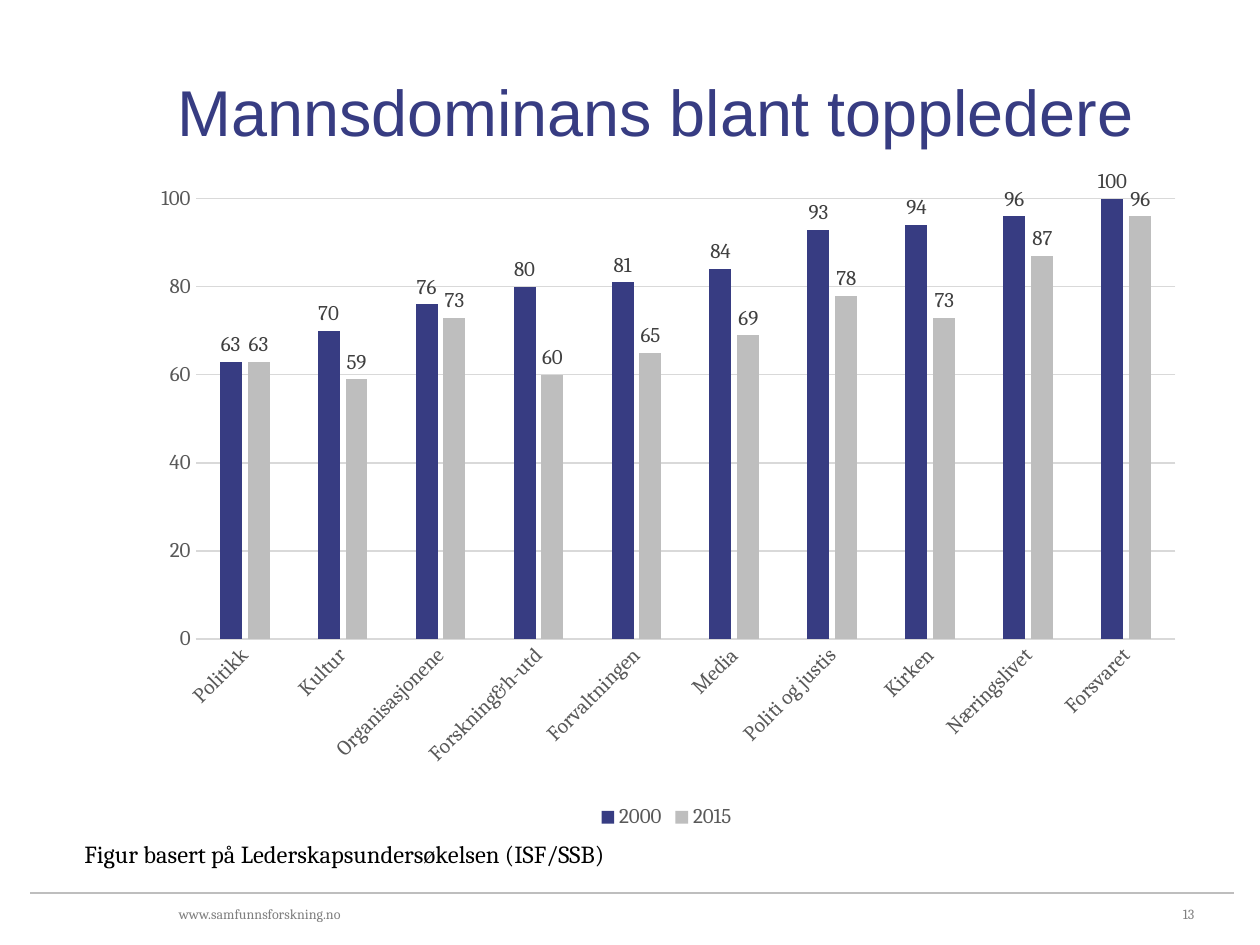
import pptx
import pptx.chart.data
import pptx.dml.color
import pptx.enum.chart
import pptx.enum.shapes
import pptx.enum.text
import pptx.oxml
import pptx.oxml.ns
import pptx.util

SCALE = 9144
NAVY = "373C82"
SILVER = "BEBEBE"
GRID = "D9D9D9"
AXIS_TEXT = "595959"
LABEL_TEXT = "404040"
FOOTER_TEXT = "7F7F7F"
BLACK = "000000"

SECTORS = ["Politikk", "Kultur", "Organisasjonene", "Forskning&h-utd", "Forvaltningen",
           "Media", "Politi og justis", "Kirken", "Næringslivet", "Forsvaret"]
MEN_SHARE = {
    "2000": ([63, 70, 76, 80, 81, 84, 93, 94, 96, 100], NAVY),
    "2015": ([63, 59, 73, 60, 65, 69, 78, 73, 87, 96], SILVER),
}
PLOT_AREA = {"x": 0.054, "y": 0.045, "w": 0.928, "h": 0.662}


def color(value):
    return pptx.dml.color.RGBColor.from_string(value)


def emu(*lengths):
    return [pptx.util.Emu(length * SCALE) for length in lengths]


def set_font(font, size, value, name="Cambria"):
    font.size = pptx.util.Pt(size)
    font.name = name
    font.bold = False
    font.color.rgb = color(value)


def set_line(line, value, width=0.75):
    line.color.rgb = color(value)
    line.width = pptx.util.Pt(width)


class SlideBuilder:
    def __init__(self, slide):
        self.slide = slide

    def fill_frame(self, frame, text, size, value, name, align, anchor):
        frame.margin_left = frame.margin_right = frame.margin_top = frame.margin_bottom = 0
        frame.word_wrap = True
        frame.vertical_anchor = anchor
        frame.text = text
        paragraph = frame.paragraphs[0]
        paragraph.alignment = align
        set_font(paragraph.font, size, value, name)

    def title(self, text, box):
        heading = self.slide.shapes.title
        heading.left, heading.top, heading.width, heading.height = emu(*box)
        heading.text_frame.auto_size = pptx.enum.text.MSO_AUTO_SIZE.NONE
        self.fill_frame(heading.text_frame, text, 37, NAVY, "Arial",
                        pptx.enum.text.PP_ALIGN.LEFT, pptx.enum.text.MSO_ANCHOR.BOTTOM)

    def text(self, text, box, size, value, align=pptx.enum.text.PP_ALIGN.LEFT,
             anchor=pptx.enum.text.MSO_ANCHOR.MIDDLE):
        frame = self.slide.shapes.add_textbox(*emu(*box)).text_frame
        self.fill_frame(frame, text, size, value, "Cambria", align, anchor)

    def rule(self, start, end, value, width):
        connector = self.slide.shapes.add_connector(
            pptx.enum.shapes.MSO_CONNECTOR.STRAIGHT, *emu(*start, *end))
        set_line(connector.line, value, width)
        properties = connector._element.spPr
        properties.append(pptx.oxml.parse_xml(
            f"<a:effectLst {pptx.oxml.ns.nsdecls('a')}/>"))

    def column_chart(self, categories, series, box):
        data = pptx.chart.data.CategoryChartData()
        data.categories = categories
        for name, (values, _) in series.items():
            data.add_series(name, values)
        chart = self.slide.shapes.add_chart(
            pptx.enum.chart.XL_CHART_TYPE.COLUMN_CLUSTERED, *emu(*box), data).chart
        chart.has_title = False
        set_font(chart.font, 10, BLACK)
        plot = chart.plots[0]
        plot.gap_width = 219
        plot.overlap = -27
        plot.vary_by_categories = False
        for columns, (_, fill) in zip(plot.series, series.values()):
            columns.format.fill.solid()
            columns.format.fill.fore_color.rgb = color(fill)
            labels = columns.data_labels
            labels.show_value = True
            labels.position = pptx.enum.chart.XL_LABEL_POSITION.OUTSIDE_END
            set_font(labels.font, 12, LABEL_TEXT)
        self.style_axes(chart)
        chart.has_legend = True
        chart.legend.position = pptx.enum.chart.XL_LEGEND_POSITION.BOTTOM
        chart.legend.include_in_layout = False
        set_font(chart.legend.font, 12, AXIS_TEXT)
        self.place_plot(chart)

    def style_axes(self, chart):
        for axis in (chart.category_axis, chart.value_axis):
            axis.major_tick_mark = pptx.enum.chart.XL_TICK_MARK.NONE
            axis.minor_tick_mark = pptx.enum.chart.XL_TICK_MARK.NONE
            set_font(axis.tick_labels.font, 12, AXIS_TEXT)
        sectors, shares = chart.category_axis, chart.value_axis
        set_line(sectors.format.line, GRID)
        sectors._element.txPr.bodyPr.set("rot", "-2700000")
        shares.format.line.fill.background()
        shares.minimum_scale = 0
        shares.maximum_scale = 100
        shares.major_unit = 20
        shares.has_major_gridlines = True
        set_line(shares.major_gridlines.format.line, GRID)

    def place_plot(self, chart):
        area = chart._chartSpace.chart.plotArea
        for layout in area.findall(pptx.oxml.ns.qn("c:layout")):
            area.remove(layout)
        modes = "".join(f'<c:{axis}Mode val="edge"/>' for axis in "xy")
        sizes = "".join(f'<c:{key} val="{part}"/>' for key, part in PLOT_AREA.items())
        area.insert(0, pptx.oxml.parse_xml(
            f"<c:layout {pptx.oxml.ns.nsdecls('c')}><c:manualLayout>"
            f'<c:layoutTarget val="inner"/>{modes}{sizes}</c:manualLayout></c:layout>'))


def main():
    deck = pptx.Presentation()
    deck.slide_width, deck.slide_height = emu(1000, 750)
    builder = SlideBuilder(deck.slides.add_slide(deck.slide_layouts[5]))
    builder.rule((24, 709), (979, 709), SILVER, 1)
    builder.text("www.samfunnsforskning.no", (142, 719, 236, 13), 8, FOOTER_TEXT)
    builder.title("Mannsdominans blant toppledere", (141, 56, 807, 63))
    builder.text("13", (902, 718, 46, 14), 8, FOOTER_TEXT, pptx.enum.text.PP_ALIGN.RIGHT)
    builder.text("Figur basert på Lederskapsundersøkelsen (ISF/SSB)", (67, 666, 646, 24),
                 14, BLACK, anchor=pptx.enum.text.MSO_ANCHOR.TOP)
    builder.column_chart(SECTORS, MEN_SHARE, (110, 134, 838, 528))
    deck.save("out.pptx")


if __name__ == "__main__":
    main()
